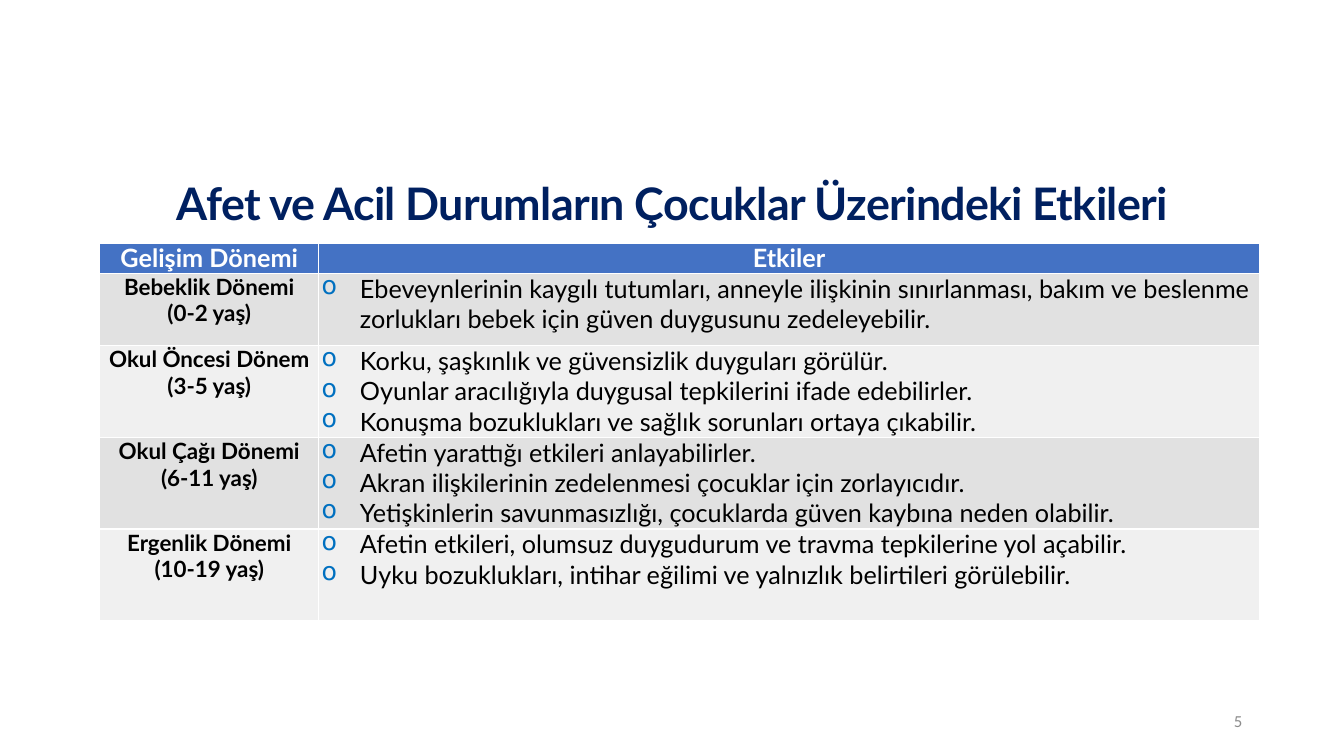
from lxml import etree
from pptx import Presentation
from pptx.dml.color import RGBColor
from pptx.enum.text import MSO_ANCHOR, PP_ALIGN
from pptx.oxml.ns import qn
from pptx.util import Inches, Pt

CENTER, LEFT, RIGHT, JUSTIFY = PP_ALIGN.CENTER, PP_ALIGN.LEFT, PP_ALIGN.RIGHT, PP_ALIGN.JUSTIFY
MIDDLE = MSO_ANCHOR.MIDDLE
TITLE_ONLY = 5

COLORS = {
    "title": "002060", "header": "4472C4", "header_text": "FFFFFF", "text": "000000",
    "bullet": "0070C0", "dark_band": "E1E1E1", "light_band": "F0F0F0", "number": "8C8C8C",
}

HEADINGS = ("Gelişim Dönemi", "Etkiler")
PERIODS = [
    ("Bebeklik Dönemi", "(0-2 yaş)", [
        "Ebeveynlerinin kaygılı tutumları, anneyle ilişkinin sınırlanması, bakım ve "
        "beslenme zorlukları bebek için güven duygusunu zedeleyebilir."]),
    ("Okul Öncesi Dönem", "(3-5 yaş)", [
        "Korku, şaşkınlık ve güvensizlik duyguları görülür.",
        "Oyunlar aracılığıyla duygusal tepkilerini ifade edebilirler.",
        "Konuşma bozuklukları ve sağlık sorunları ortaya çıkabilir."]),
    ("Okul Çağı Dönemi", "(6-11 yaş)", [
        "Afetin yarattığı etkileri anlayabilirler.",
        "Akran ilişkilerinin zedelenmesi çocuklar için zorlayıcıdır.",
        "Yetişkinlerin savunmasızlığı, çocuklarda güven kaybına neden olabilir."]),
    ("Ergenlik Dönemi", "(10-19 yaş)", [
        "Afetin etkileri, olumsuz duygudurum ve travma tepkilerine yol açabilir.",
        "Uyku bozuklukları, intihar eğilimi ve yalnızlık belirtileri görülebilir."]),
]


class SlideBuilder:
    """Draws styled elements; lengths are percentages of the slide's size."""

    font = "Lato"

    def __init__(self, presentation):
        self.width, self.height = presentation.slide_width, presentation.slide_height
        self.slide = presentation.slides.add_slide(presentation.slide_layouts[TITLE_ONLY])

    def across(self, share):
        return round(self.width * share / 100)

    def down(self, share):
        return round(self.height * share / 100)

    def box(self, left, top, width, height):
        return self.across(left), self.down(top), self.across(width), self.down(height)

    def add_lines(self, frame, lines, size, color, align, bold=False, font=None, bullet=False):
        for index, line in enumerate(lines):
            paragraph = frame.paragraphs[0] if index == 0 else frame.add_paragraph()
            paragraph.alignment = align
            if bullet:
                self.add_bullet(paragraph)
            run = paragraph.add_run()
            run.text = line
            run.font.name = font or self.font
            run.font.size = Pt(size)
            run.font.bold = bold
            run.font.color.rgb = RGBColor.from_string(COLORS[color])

    def add_bullet(self, paragraph):
        properties = paragraph._p.get_or_add_pPr()
        indent = Inches(0.38)
        properties.set("marL", str(indent))
        properties.set("indent", str(-indent))
        bullet_color = etree.SubElement(properties, qn("a:buClr"))
        etree.SubElement(bullet_color, qn("a:srgbClr"), val=COLORS["bullet"])
        etree.SubElement(properties, qn("a:buChar"), char="o")

    def title(self, text, *place):
        shape = self.slide.shapes.title
        shape.left, shape.top, shape.width, shape.height = self.box(*place)
        frame = shape.text_frame
        frame.vertical_anchor = MIDDLE
        self.add_lines(frame, [text], 32, "title", CENTER, bold=True)
        paragraph = frame.paragraphs[0]
        paragraph.line_spacing = 0.9
        paragraph.runs[0]._r.get_or_add_rPr().set("spc", "-50")

    def table(self, left, top, columns, rows):
        place = self.box(left, top, sum(columns), sum(rows))
        table = self.slide.shapes.add_table(len(rows), len(columns), *place).table
        for column, share in zip(table.columns, columns):
            column.width = self.across(share)
        for row, share in zip(table.rows, rows):
            row.height = self.down(share)
        return table

    def cell(self, cell, lines, size, color, align, fill, **style):
        cell.margin_left = cell.margin_right = Inches(0.03)
        cell.margin_top = cell.margin_bottom = 0
        cell.fill.solid()
        cell.fill.fore_color.rgb = RGBColor.from_string(COLORS[fill])
        self.add_lines(cell.text_frame, lines, size, color, align, **style)

    def page_number(self, text, *place):
        frame = self.slide.shapes.add_textbox(*self.box(*place)).text_frame
        frame.word_wrap = True
        frame.vertical_anchor = MIDDLE
        self.add_lines(frame, [text], 12, "number", RIGHT, font="Calibri")


def main():
    presentation = Presentation()
    presentation.slide_width, presentation.slide_height = Inches(13.33), Inches(7.5)
    builder = SlideBuilder(presentation)

    # Title
    builder.title("Afet ve Acil Durumların Çocuklar Üzerindeki Etkileri", 6.9, 22.4, 86.25, 9.73)

    # Table of development periods and effects
    table = builder.table(7.43, 32.13, [16.28, 70], [3.87, 9.6] + [12.13] * 3)
    for column, heading in enumerate(HEADINGS):
        builder.cell(table.cell(0, column), [heading], 18, "header_text", CENTER, "header", bold=True)
    for row, (period, ages, effects) in enumerate(PERIODS, start=1):
        band = "dark_band" if row % 2 else "light_band"
        align = JUSTIFY if len(effects) > 1 else LEFT
        builder.cell(table.cell(row, 0), [period, ages], 16, "text", CENTER, band, bold=True)
        builder.cell(table.cell(row, 1), effects, 18, "text", align, band, bullet=True)

    # Page number
    builder.page_number("5", 70.67, 92.67, 22.5, 5.33)

    presentation.save("out.pptx")


if __name__ == "__main__":
    main()
